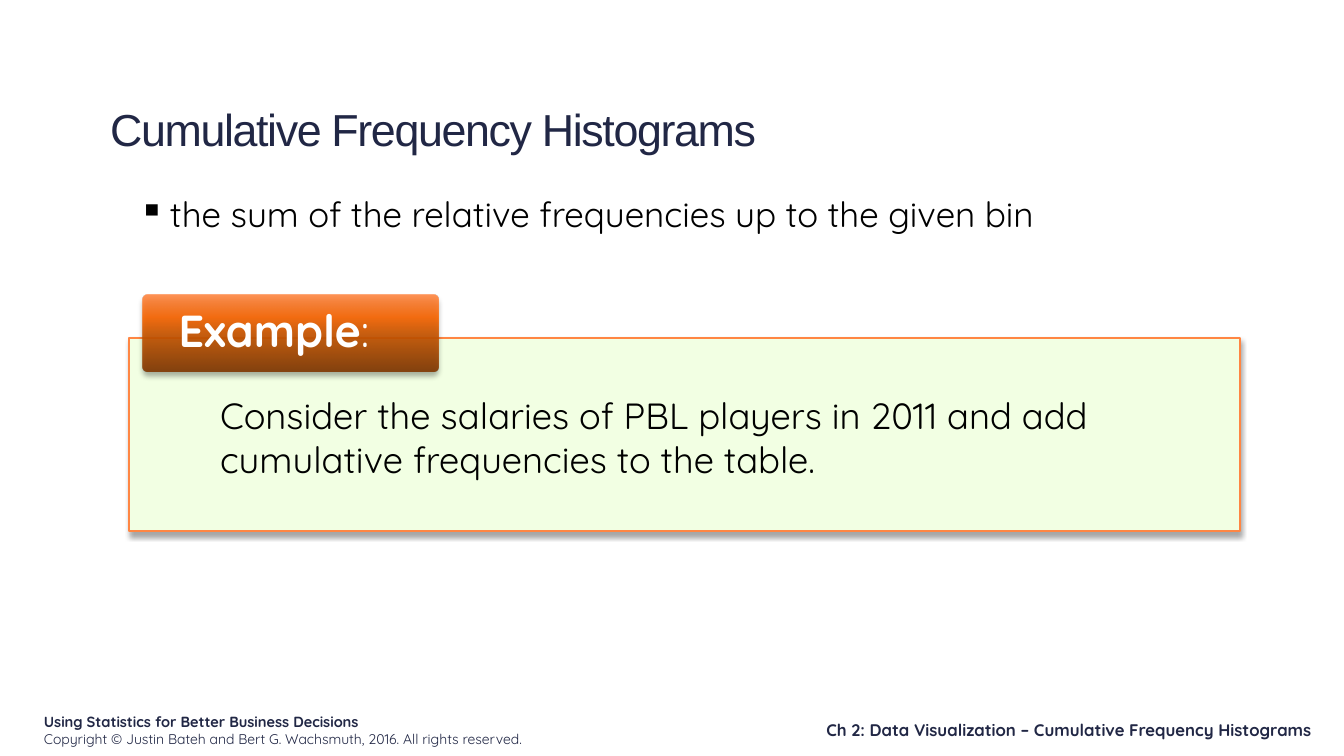
"""Builds the slide that introduces cumulative frequency histograms."""
from lxml import etree
from pptx import Presentation
from pptx.dml.color import RGBColor
from pptx.enum.shapes import MSO_SHAPE as Shape
from pptx.enum.text import MSO_ANCHOR as Anchor, PP_ALIGN as Align
from pptx.oxml.ns import nsdecls
from pptx.util import Emu, Pt

NAVY = RGBColor(0x21, 0x27, 0x45)
BLACK = RGBColor(0, 0, 0)
WHITE = RGBColor(0xFF, 0xFF, 0xFF)
PALE_GREEN = RGBColor(0xF2, 0xFF, 0xE3)
ORANGE = RGBColor(0xFF, 0x86, 0x43)
LABEL_STOPS = [
    (0, RGBColor(0x7E, 0x36, 0x00)),
    (50, RGBColor(0xCC, 0x57, 0x00)),
    (70, RGBColor(0xF9, 0x65, 0x00)),
    (100, RGBColor(0xFF, 0x89, 0x47)),
]

BODY_FONT, TITLE_FONT = "Quicksand", "Arial"
EMU_PER_PX = 914400 / 100.8
SLIDE_SIZE = (1344, 756)
DEFAULT_INSETS = (10, 5, 10, 5)

TITLE = [[("Cumulative Frequency Histograms", 32, False)]]
DEFINITION = [[("the sum of the relative frequencies up to the given bin", 25, False)]]
EXAMPLE = [[("Consider the salaries of PBL players in 2011 and add "
             "cumulative frequencies to the table.", 26, False)]]
LABEL = [[("Example", 32, True), (":", 32, False)]]
BOOK = [
    [("Using Statistics for Better Business Decisions", 10.5, True)],
    [("Copyright © Justin Bateh and Bert G. Wachsmuth, 2016. All rights reserved.",
      10, False)],
]
CHAPTER = [[("Ch 2: Data Visualization – Cumulative Frequency Histograms", 12, True)]]

BOOK_BOX = (34, 708, 532, 40)
CHAPTER_BOX = (655, 715, 667, 30)
TITLE_BOX = (100, 97, 1206, 99)
DEFINITION_BOX = (129, 188, 1073, 54)
EXAMPLE_BOX = (129, 338, 1111, 193)
LABEL_BOX = (143, 295, 295, 77)


def px(length):
    return Emu(round(length * EMU_PER_PX))


def write(shape, paragraphs, color, font=BODY_FONT, align=Align.LEFT,
          anchor=Anchor.TOP, insets=DEFAULT_INSETS):
    frame = shape.text_frame
    frame.word_wrap = True
    frame.vertical_anchor = anchor
    (frame.margin_left, frame.margin_top,
     frame.margin_right, frame.margin_bottom) = map(px, insets)
    for index, runs in enumerate(paragraphs):
        paragraph = frame.add_paragraph() if index else frame.paragraphs[0]
        paragraph.alignment = align
        for text, size, bold in runs:
            run = paragraph.add_run()
            run.text = text
            run.font.name, run.font.size, run.font.bold = font, Pt(size), bold
            run.font.color.rgb = color
    return frame


def add_text(slide, box, *content, **style):
    return write(slide.shapes.add_textbox(*map(px, box)), *content, **style)


def add_panel(slide, kind, box):
    shape = slide.shapes.add_shape(kind, *map(px, box))
    shape.shadow.inherit = False
    effects = shape.element.spPr.find("{*}effectLst")
    effects.append(etree.fromstring(
        f'<a:outerShdw {nsdecls("a")} blurRad="{Pt(4)}" dist="{Pt(3)}" dir="5400000"'
        ' rotWithShape="0"><a:srgbClr val="000000"><a:alpha val="35000"/></a:srgbClr>'
        '</a:outerShdw>'))
    return shape


def fill_gradient(shape, stops):
    shape.fill.gradient()
    gradient = shape.element.spPr.find("{*}gradFill")
    stop_xml = "".join(
        f'<a:gs pos="{position * 1000}"><a:srgbClr val="{color}">'
        '<a:alpha val="90000"/></a:srgbClr></a:gs>' for position, color in stops)
    gradient.getparent().replace(gradient, etree.fromstring(
        f'<a:gradFill {nsdecls("a")} rotWithShape="1"><a:gsLst>{stop_xml}</a:gsLst>'
        '<a:lin ang="16200000" scaled="0"/></a:gradFill>'))


def add_bullet(paragraph, character, indent):
    properties = paragraph._p.get_or_add_pPr()
    properties.set("marL", str(px(indent)))
    properties.set("indent", str(-px(indent)))
    etree.SubElement(properties, "{http://schemas.openxmlformats.org/drawingml/2006/main}buChar",
                     char=character)


def main():
    presentation = Presentation()
    presentation.slide_width, presentation.slide_height = map(px, SLIDE_SIZE)
    slide = presentation.slides.add_slide(presentation.slide_layouts[6])

    book = add_text(slide, BOOK_BOX, BOOK, NAVY)
    book.paragraphs[-1].space_after = Pt(1)
    add_text(slide, CHAPTER_BOX, CHAPTER, NAVY, align=Align.RIGHT, anchor=Anchor.BOTTOM)

    title = add_text(slide, TITLE_BOX, TITLE, NAVY, font=TITLE_FONT)
    title.paragraphs[0].runs[0].font._element.set("spc", "-100")

    example = add_panel(slide, Shape.RECTANGLE, EXAMPLE_BOX)
    example.fill.solid()
    example.fill.fore_color.rgb = PALE_GREEN
    example.line.color.rgb = ORANGE
    example.line.width = Pt(1)
    write(example, EXAMPLE, BLACK, insets=(91, 55, 91, 22))

    label = add_panel(slide, Shape.ROUNDED_RECTANGLE, LABEL_BOX)
    label.adjustments[0] = 0.07
    fill_gradient(label, LABEL_STOPS)
    label.line.fill.background()
    label_frame = write(label, LABEL, WHITE, anchor=Anchor.MIDDLE, insets=(34, 4, 34, 4))
    label_frame.paragraphs[0].line_spacing = 0.9

    definition = add_text(slide, DEFINITION_BOX, DEFINITION, BLACK)
    add_bullet(definition.paragraphs[0], "▪", 31)

    presentation.save("out.pptx")


if __name__ == "__main__":
    main()
